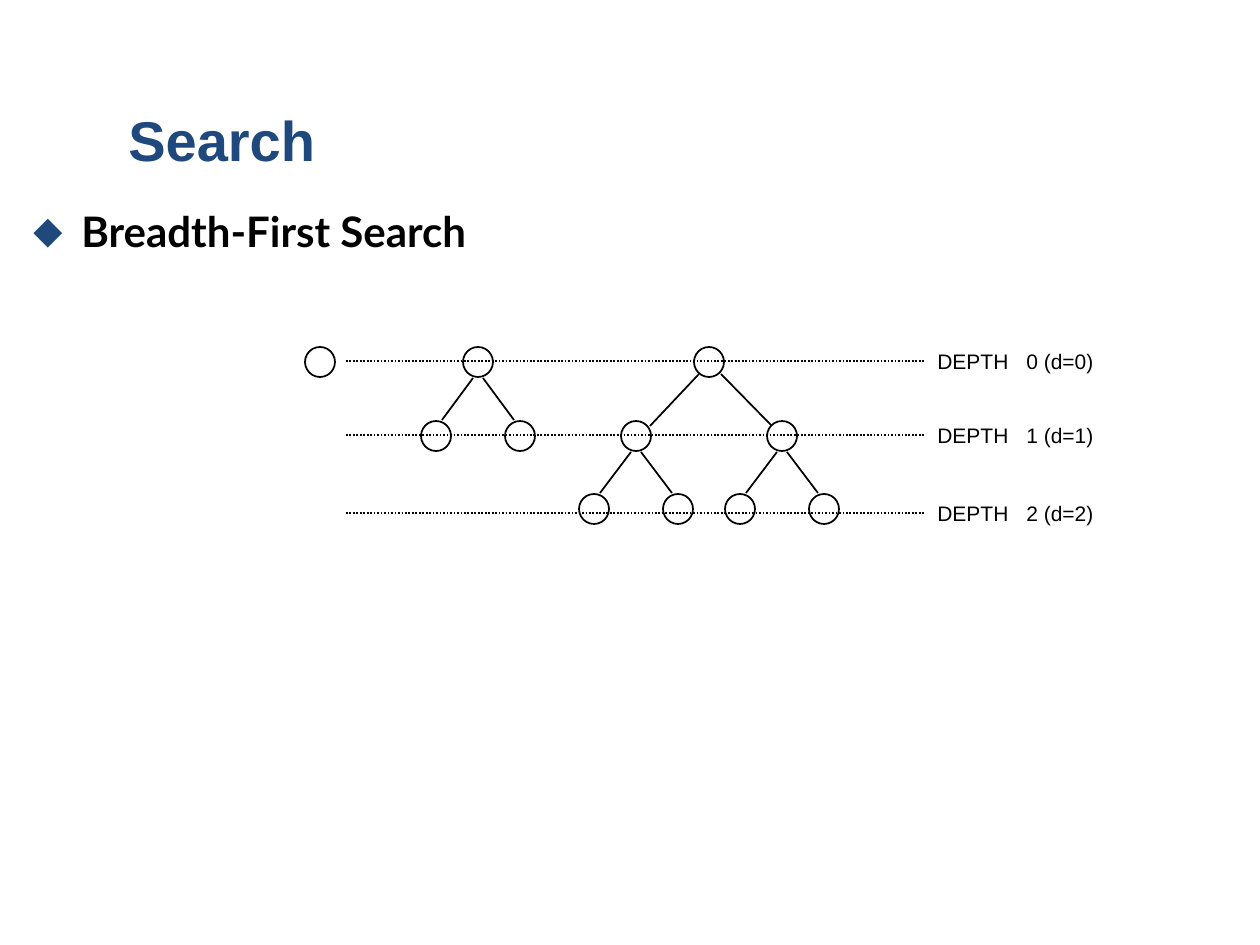
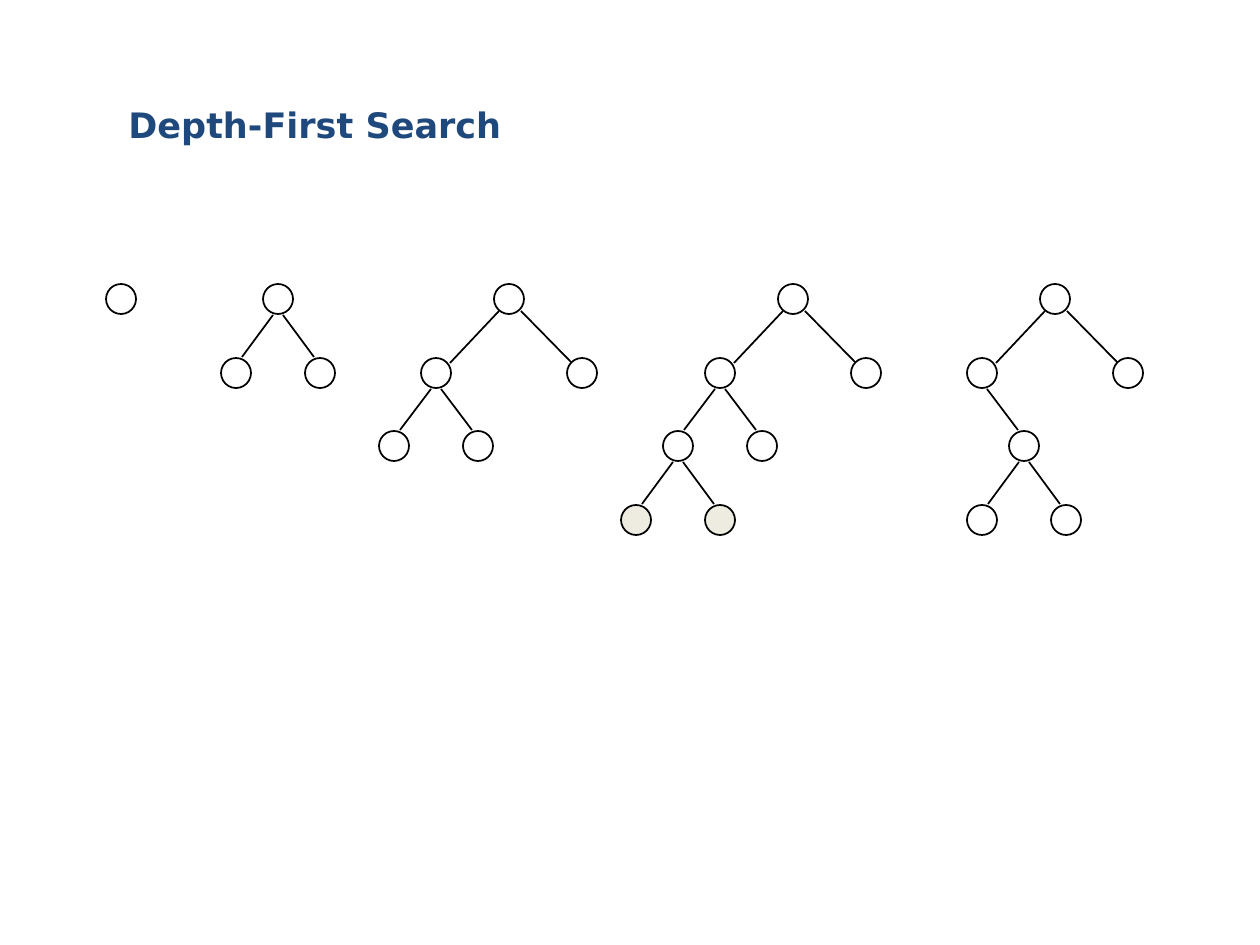
"""Build two slides that show how breadth-first and depth-first search grow a tree."""
import dataclasses

import lxml.etree
import pptx
import pptx.dml.color
import pptx.enum.dml
import pptx.enum.shapes
import pptx.enum.text
import pptx.oxml.ns
import pptx.util

PX = 914400 / 126


@dataclasses.dataclass(frozen=True)
class Theme:
    """Colours, fonts and type sizes of the deck."""
    accent: str = "1F497D"
    ink: str = "000000"
    shade: str = "EEECE1"
    sans: str = "Arial"
    body: str = "Lato"
    wide_sans: str = "DejaVu Sans"
    title_size: int = 32
    subtitle_size: int = 20
    body_size: int = 24
    bullet_percent: int = 90
    label_size: int = 12
    line_width: int = 1


@dataclasses.dataclass(frozen=True)
class Node:
    """A tree node whose children are keyed by the branch leading to them."""
    children: dict = dataclasses.field(default_factory=dict)
    shaded: bool = False


@dataclasses.dataclass(frozen=True)
class Branch:
    """Child offset, and line ends relative to the parent and child centres."""
    dx: int
    start: tuple
    end: tuple


THEME = Theme()
NODE_SIZE = 30
LEVELS = (0, 74, 147, 221)
WIDE_LEFT = Branch(-73, (-10, 12), (14, -10))
WIDE_RIGHT = Branch(73, (12, 12), (-11, -11))
LEFT = Branch(-42, (-5, 16), (6, -16))
RIGHT = Branch(42, (5, 16), (-6, -16))

LEAF = Node()
SHADED = Node(shaded=True)
PAIR = Node({LEFT: LEAF, RIGHT: LEAF})
SHADED_PAIR = Node({LEFT: SHADED, RIGHT: SHADED})
FULL = Node({WIDE_LEFT: PAIR, WIDE_RIGHT: PAIR})
LEFT_OPEN = Node({WIDE_LEFT: PAIR, WIDE_RIGHT: LEAF})
DEEPEST = Node({WIDE_LEFT: Node({LEFT: SHADED_PAIR, RIGHT: LEAF}), WIDE_RIGHT: LEAF})
BACKTRACKED = Node({WIDE_LEFT: Node({RIGHT: PAIR}), WIDE_RIGHT: LEAF})


def px(n):
    """Turn pixels into EMU."""
    return pptx.util.Emu(round(n * PX))


def rgb(value):
    """Turn a hex string into a colour."""
    return pptx.dml.color.RGBColor.from_string(value)


def add_xml(parent, tag, **attributes):
    """Append a DrawingML child element and return it."""
    return lxml.etree.SubElement(parent, pptx.oxml.ns.qn(tag), **attributes)


def add_text(s, text, box, font, size, color, bold=False, anchor="TOP"):
    """Add a one-paragraph text box and return its paragraph."""
    tf = s.shapes.add_textbox(*map(px, box)).text_frame
    tf.word_wrap = True
    tf.vertical_anchor = getattr(pptx.enum.text.MSO_ANCHOR, anchor)
    p = tf.paragraphs[0]
    p.text = text
    for r in p.runs:
        r.font.name = font
        r.font.size = pptx.util.Pt(size)
        r.font.bold = bold
        r.font.color.rgb = rgb(color)
    return p


def add_title(s, text, height, font, size):
    """Add the slide title."""
    add_text(s, text, (116, 60, 1071, height), font, size, THEME.accent, True, "MIDDLE")


def add_bullet(s, text):
    """Add the body text with its diamond bullet."""
    p = add_text(s, text, (21, 199, 1207, 640), THEME.body, THEME.body_size, THEME.ink, True)
    pPr = p._p.get_or_add_pPr()
    pPr.set("marL", str(px(48)))
    pPr.set("indent", str(px(-48)))
    add_xml(add_xml(pPr, "a:buClr"), "a:srgbClr", val=THEME.accent)
    add_xml(pPr, "a:buSzPct", val=str(THEME.bullet_percent * 1000))
    add_xml(pPr, "a:buFont", typeface=THEME.wide_sans)
    add_xml(pPr, "a:buChar", char="◆")


def add_line(s, x1, y1, x2, y2, dotted=False):
    """Add a thin straight line."""
    straight = pptx.enum.shapes.MSO_CONNECTOR.STRAIGHT
    line = s.shapes.add_connector(straight, px(x1), px(y1), px(x2), px(y2))
    line.line.color.rgb = rgb(THEME.ink)
    line.line.width = pptx.util.Pt(THEME.line_width)
    if dotted:
        line.line.dash_style = pptx.enum.dml.MSO_LINE.ROUND_DOT
    add_xml(line._element.spPr, "a:effectLst")


def add_node(s, x, y, shaded):
    """Add a circle centred on x, y."""
    half = NODE_SIZE // 2
    oval = pptx.enum.shapes.MSO_SHAPE.OVAL
    sp = s.shapes.add_shape(oval, px(x - half), px(y - half), px(NODE_SIZE), px(NODE_SIZE))
    sp.shadow.inherit = False
    if shaded:
        sp.fill.solid()
        sp.fill.fore_color.rgb = rgb(THEME.shade)
    else:
        sp.fill.background()
    sp.line.color.rgb = rgb(THEME.ink)
    sp.line.width = pptx.util.Pt(THEME.line_width)


def add_tree(s, node, x, root_y, level=0):
    """Add a node and, below it, its branches and subtrees."""
    y = root_y + LEVELS[level]
    add_node(s, x, y, node.shaded)
    for branch, child in node.children.items():
        child_x, child_y = x + branch.dx, root_y + LEVELS[level + 1]
        add_line(s, x + branch.start[0], y + branch.start[1],
                 child_x + branch.end[0], child_y + branch.end[1])
        add_tree(s, child, child_x, root_y, level + 1)


def add_depth(s, depth, line_y, label_y):
    """Add a dotted depth line and its label."""
    add_line(s, 346, line_y, 924, line_y, dotted=True)
    p = add_text(s, f"DEPTH\t{depth} (d={depth})", (925, label_y, 190, 38),
                 THEME.sans, THEME.label_size, THEME.ink)
    tabs = add_xml(p._p.get_or_add_pPr(), "a:tabLst")
    add_xml(tabs, "a:tab", pos=str(px(89)), algn="l")


def build_breadth_first(s):
    """Fill the breadth-first slide."""
    add_bullet(s, "Breadth-First Search")
    add_title(s, "Search", 158, THEME.sans, THEME.title_size)
    for x, tree in ((320, LEAF), (478, PAIR), (709, FULL)):
        add_tree(s, tree, x, 362)
    for depth, (line_y, label_y) in enumerate(((361, 342), (435, 416), (513, 494))):
        add_depth(s, depth, line_y, label_y)


def build_depth_first(s):
    """Fill the depth-first slide."""
    add_title(s, "Depth-First Search", 128, THEME.wide_sans, THEME.subtitle_size)
    trees = ((121, LEAF), (278, PAIR), (509, LEFT_OPEN), (793, DEEPEST), (1055, BACKTRACKED))
    for x, tree in trees:
        add_tree(s, tree, x, 299)


def main():
    """Build and save the deck."""
    prs = pptx.Presentation()
    prs.slide_width, prs.slide_height = px(1260), px(945)
    for build in (build_breadth_first, build_depth_first):
        build(prs.slides.add_slide(prs.slide_layouts[6]))
    prs.save("out.pptx")


if __name__ == "__main__":
    main()
